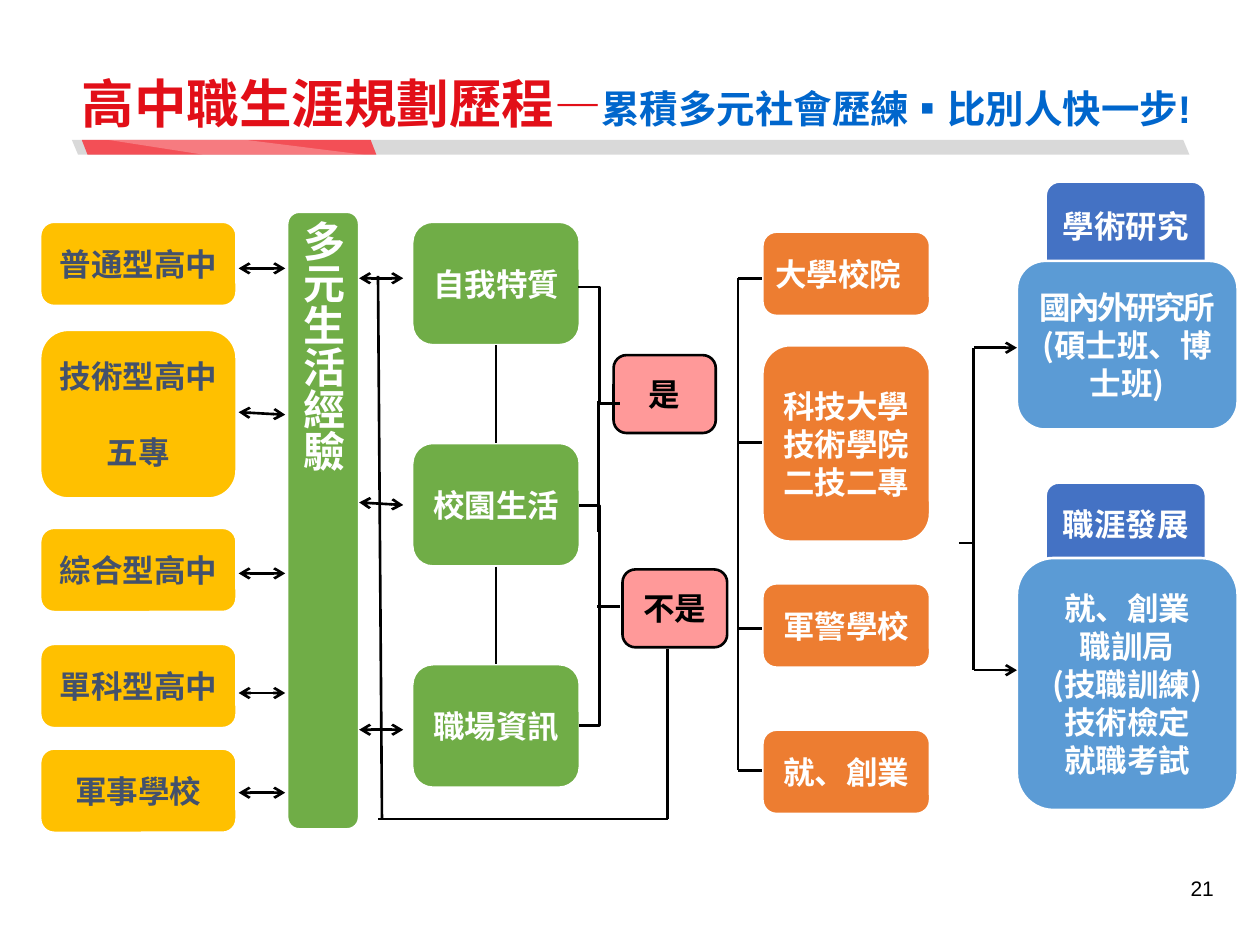
import dataclasses
import pptx
import pptx.dml.color
import pptx.enum.shapes
import pptx.enum.text
import pptx.oxml
import pptx.oxml.ns
import pptx.util
from lxml import etree

Cm = pptx.util.Cm
Pt = pptx.util.Pt
Kind = pptx.enum.shapes.MSO_SHAPE
Link = pptx.enum.shapes.MSO_CONNECTOR
Align = pptx.enum.text.PP_ALIGN
Anchor = pptx.enum.text.MSO_ANCHOR
qn = pptx.oxml.ns.qn


@dataclasses.dataclass(frozen=True)
class Theme:
    """Colours, fonts and type sizes."""
    white: str = "FFFFFF"
    black: str = "000000"
    slate: str = "43516C"
    gold: str = "FFC000"
    green: str = "70AD47"
    orange: str = "ED7D31"
    pink: str = "FF9999"
    navy: str = "4472C4"
    sky: str = "5B9BD5"
    red: str = "E20F18"
    blue: str = "0066CC"
    grey: str = "D9D9D9"
    coral: str = "F34F56"
    latin: str = "Arial"
    asian: str = "Noto Sans CJK SC"
    head: float = 30
    dash: float = 27
    sub: float = 22
    tall: float = 24
    body: float = 18
    small: float = 12
    pitch: float = 21.7
    line: float = 1.5


@dataclasses.dataclass(frozen=True)
class Box:
    """A frame in centimetres."""
    x: float
    y: float
    w: float
    h: float

    def sub(self, x, y, w, h):
        """Return a frame placed from this one's corner."""
        return Box(self.x + x, self.y + y, w, h)

    def emu(self):
        """Return the frame as lengths."""
        return [Cm(n) for n in (self.x, self.y, self.w, self.h)]


T = Theme()


def put(thing, vals):
    """Set each named value on a thing."""
    for name, val in vals.items():
        setattr(thing, name, val)


def rgb(tone):
    """Return a colour from its hex text."""
    return pptx.dml.color.RGBColor.from_string(tone)


def write(para, text, size, tone, bold=True, latin=T.asian):
    """Add a run of text to a paragraph."""
    run = para.add_run()
    run.text = text
    put(run.font, {"size": Pt(size), "bold": bold, "name": latin})
    run.font.color.rgb = rgb(tone)
    props = run._r.get_or_add_rPr()
    etree.SubElement(props, qn("a:ea")).set("typeface", T.asian)
    return props


def paint(shape, fill, edge=None):
    """Give a shape a flat fill and an optional edge."""
    shape.shadow.inherit = False
    shape.fill.solid()
    shape.fill.fore_color.rgb = rgb(fill)
    if edge:
        shape.line.color.rgb = rgb(edge)
        shape.line.width = Pt(T.line)
    else:
        shape.line.fill.background()


def tile(slide, box, text, fill, tone=T.white, edge=T.white,
         kind=Kind.ROUNDED_RECTANGLE, align=Align.CENTER, size=T.body):
    """Draw a filled tile with one paragraph for each line of text."""
    shape = slide.shapes.add_shape(kind, *box.emu())
    paint(shape, fill, edge)
    frame = shape.text_frame
    put(frame, {"word_wrap": True, "vertical_anchor": Anchor.MIDDLE,
                "margin_left": Cm(0.18), "margin_right": Cm(0.18),
                "margin_top": Cm(0.1), "margin_bottom": Cm(0.1)})
    lines = text.split("\n")
    for i, line in enumerate(lines):
        para = frame.add_paragraph() if i else frame.paragraphs[0]
        para.alignment = align
        if len(lines) > 1:
            para.line_spacing = Pt(T.pitch)
        write(para, line, size, tone)
    return shape


def wire(slide, box, x1, y1, x2, y2, ends=(), bend=None):
    """Draw a line between two points of a frame."""
    spots = [Cm(n) for n in (box.x + x1, box.y + y1, box.x + x2, box.y + y2)]
    line = slide.shapes.add_connector(Link.ELBOW if bend else Link.STRAIGHT, *spots)
    line.line.color.rgb = rgb(T.black)
    line.line.width = Pt(T.line)
    props = line._element.spPr
    if bend:
        props.find(qn("a:prstGeom")).set("prst", bend)
    for end in ends:
        etree.SubElement(props.find(qn("a:ln")), qn("a:" + end)).set("type", "arrow")
    etree.SubElement(props, qn("a:effectLst"))


def header(slide, box):
    """Place the title over its slanted strip."""
    for x, w, fill, lean in ((0.05, 22.53, T.grey, 0.42), (0.25, 5.94, T.coral, 0.39)):
        strip = slide.shapes.add_shape(Kind.PARALLELOGRAM, *box.sub(x, 2.82, w, 0.3).emu())
        strip.adjustments[0] = lean
        paint(strip, fill)
        strip._element.spPr.find(qn("a:xfrm")).set("flipH", "1")
    spots = [(Cm(box.x + x), Cm(box.y + y))
             for x, y in ((5.94, 3.12), (3.55, 2.82), (0.78, 2.82), (2.71, 3.12))]
    pen = slide.shapes.build_freeform(*spots[0], scale=1.0)
    pen.add_line_segments(spots[1:], close=True)
    gleam = pen.convert_to_shape()
    paint(gleam, T.white)
    tint = gleam._element.spPr.find(qn("a:solidFill"))[0]
    etree.SubElement(tint, qn("a:alpha")).set("val", "25000")
    frame = slide.shapes.add_textbox(*box.sub(0, 0, box.w, 2.84).emu()).text_frame
    put(frame, {"word_wrap": True, "vertical_anchor": Anchor.BOTTOM})
    para = frame.paragraphs[0]
    para.line_spacing = 0.9
    for text, size, tone in (("高中職生涯規劃歷程", T.head, T.red), ("—", T.dash, T.red),
                             ("累積多元社會歷練▪比別人快一步!", T.sub, T.blue)):
        write(para, text, size, tone, latin=T.latin)


def schools(slide, box):
    """Place the school types and their arrows."""
    rows = (("普通型高中", 0, 1.7, 0.94, 0.94), ("技術型高中\n五專", 2.18, 3.4, 3.84, 3.89),
            ("綜合型高中", 6.17, 1.7, 7.09, 7.09), ("單科型高中", 8.51, 1.7, 9.5, 9.5),
            ("軍事學校", 10.62, 1.7, 11.51, 11.51))
    for text, y, h, start, stop in rows:
        shape = tile(slide, box.sub(0, y, 3.96, h), text, T.gold, T.slate)
        for para in shape.text_frame.paragraphs[1:]:
            para.space_before = Pt(T.pitch)
        wire(slide, box, 4, start, box.w, stop, ("headEnd", "tailEnd"))


def life(slide, box):
    """Place the upright bar and its arrows."""
    bar = tile(slide, box, "多元生活經驗", T.green, align=Align.LEFT, size=T.tall)
    bar.text_frame._txBody.bodyPr.set("vert", "eaVert")
    for start, stop in ((1.34, 1.34), (5.86, 5.91), (10.44, 10.44)):
        wire(slide, box, box.w, start, box.w + 0.89, stop, ("headEnd", "tailEnd"))


def traits(slide, box):
    """Place the three linked factors."""
    high = 2.49
    step = (box.h - high) / 2
    for i, text in enumerate(("自我特質", "校園生活", "職場資訊")):
        tile(slide, box.sub(0, i * step, box.w, high), text, T.green)
        if i:
            wire(slide, box, box.w / 2, (i - 1) * step + high, box.w / 2, i * step)


def choice(slide, box):
    """Place the yes and no tiles with their loop."""
    for text, x, y, w in (("是", 4.75, 1.6, 2.06), ("不是", 4.93, 5.92, 2.11)):
        tile(slide, box.sub(x, y, w, 1.57), text, T.pink, T.black, T.black)
    wire(slide, box, 4.04, 0.23, 4.88, 2.57, bend="bentConnector3")
    for start, stop in ((4.63, 8), (9.07, 7.83)):
        wire(slide, box, 4.06, start, 4.47, stop, bend="bentConnector2")
    for spots in ((4.45, 2.52, 4.45, 5.16), (4.42, 6.66, 4.88, 6.66), (0, 0, 0.08, box.h),
                  (0, box.h, 5.84, box.h), (5.84, 7.52, 5.84, box.h)):
        wire(slide, box, *spots)


def paths(slide, box):
    """Place the next steps on their bracket."""
    rows = (("大學校院", 0, 1.7, 0.94), ("科技大學\n技術學院\n二技二專", 2.29, 3.96, 4.25),
            ("軍警學校", 7.09, 1.7, 8), ("就、創業", 10.04, 1.7, 10.86))
    for i, (text, y, h, mid) in enumerate(rows):
        tile(slide, box.sub(0.49, y, 3.38, h), text, T.orange,
             align=Align.CENTER if i else Align.LEFT)
        wire(slide, box, 0, mid, 0.49, mid)
    wire(slide, box, 0, rows[0][3], 0, rows[-1][3])


def goals(slide, box):
    """Place the two outcomes on their fork."""
    rows = (("學術研究", 0, 1.7, "國內外研究所\n(碩士班、博士班)", 1.6, 3.4, 3.35),
            ("職涯發展", 6.07, 1.57, "就、創業\n職訓局\n(技職訓練)\n技術檢定\n就職考試", 7.59, 5.08, 9.85))
    for name, top, high, text, y, h, mid in rows:
        tile(slide, box.sub(1.75, top, 3.23, high), name, T.navy,
             kind=Kind.ROUND_2_SAME_RECTANGLE)
        card = tile(slide, box.sub(1.17, y, 4.45, h), text, T.sky)
        if not top:
            run = card.text_frame.paragraphs[0].runs[0]
            run._r.get_or_add_rPr().set("spc", "-150")
        wire(slide, box, 0.3, mid, 1.17, mid, ("tailEnd",))
    wire(slide, box, 0, 7.29, 0.3, 7.29)
    wire(slide, box, 0.3, rows[0][-1], 0.3, rows[1][-1])


def footer(slide, box):
    """Place the page number."""
    frame = slide.shapes.add_textbox(*box.emu()).text_frame
    frame.word_wrap = True
    para = frame.paragraphs[0]
    para.alignment = Align.RIGHT
    write(para, "21", T.small, T.black, False, T.latin)


def main():
    """Build and save the slide."""
    deck = pptx.Presentation()
    put(deck, {"slide_width": Cm(25.4), "slide_height": Cm(19.05)})
    slide = deck.slides.add_slide(deck.slide_layouts[6])
    header(slide, Box(1.4, 0, 22.6, 3.12))
    schools(slide, Box(0.81, 4.47, 4.94, 12.32))
    paths(slide, Box(14.88, 4.67, 3.87, 11.74))
    traits(slide, Box(8.31, 4.47, 3.38, 11.41))
    choice(slide, Box(7.62, 5.56, 7.04, 10.95))
    life(slide, Box(5.79, 4.27, 1.45, 12.45))
    goals(slide, Box(19.33, 3.66, 5.61, 12.67))
    footer(slide, Box(20.27, 17.53, 4.45, 0.76))
    deck.save("out.pptx")


if __name__ == "__main__":
    main()
